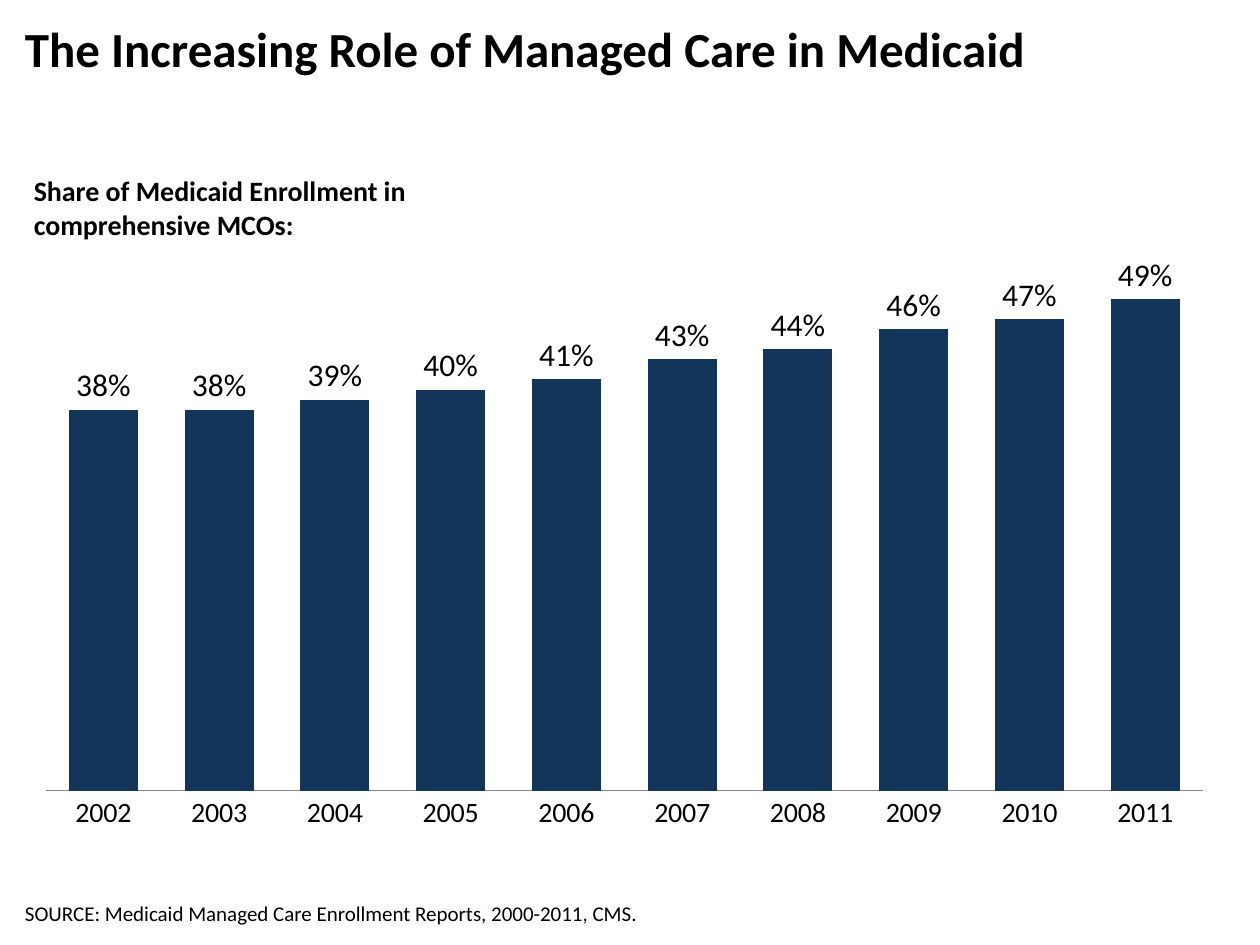
import pptx
import pptx.chart.data
import pptx.dml.color
import pptx.enum.chart
import pptx.enum.text
import pptx.oxml
import pptx.oxml.ns
import pptx.util
from pptx.util import Inches, Pt

BLACK = pptx.dml.color.RGBColor(0x00, 0x00, 0x00)
NAVY = pptx.dml.color.RGBColor(0x13, 0x35, 0x59)
GRAY = pptx.dml.color.RGBColor(0x86, 0x86, 0x86)
FONT = "Calibri"

SHARES = {
    "2002": 0.38, "2003": 0.38, "2004": 0.39, "2005": 0.40, "2006": 0.41,
    "2007": 0.43, "2008": 0.44, "2009": 0.46, "2010": 0.47, "2011": 0.49,
}


def style_font(font, size, bold=False):
    font.name = FONT
    font.size = Pt(size)
    font.bold = bold
    font.color.rgb = BLACK


def add_text(slide, box, text, size, bold=False,
             anchor=pptx.enum.text.MSO_ANCHOR.TOP):
    text_frame = slide.shapes.add_textbox(*box).text_frame
    text_frame.word_wrap = True
    text_frame.vertical_anchor = anchor
    text_frame.text = text
    style_font(text_frame.paragraphs[0].runs[0].font, size, bold)


def set_plot_layout(chart, left, top, width, height):
    """Fix the inner plot area, in fractions of the chart."""
    plot_area = chart._chartSpace.chart.plotArea
    for layout in plot_area.findall(pptx.oxml.ns.qn("c:layout")):
        plot_area.remove(layout)
    values = {"x": left, "y": top, "w": width, "h": height}
    parts = "".join(f'<c:{name} val="{value}"/>' for name, value in values.items())
    plot_area.insert(0, pptx.oxml.parse_xml(
        f'<c:layout {pptx.oxml.ns.nsdecls("c")}><c:manualLayout>'
        '<c:layoutTarget val="inner"/><c:xMode val="edge"/><c:yMode val="edge"/>'
        f'{parts}</c:manualLayout></c:layout>'))


def add_enrollment_chart(slide, box):
    chart_data = pptx.chart.data.CategoryChartData(number_format="0%")
    chart_data.categories = list(SHARES)
    chart_data.add_series("Series 1", list(SHARES.values()))
    chart = slide.shapes.add_chart(
        pptx.enum.chart.XL_CHART_TYPE.COLUMN_CLUSTERED, *box, chart_data).chart
    chart.has_legend = False
    chart.has_title = False
    style_font(chart.font, 18)
    set_plot_layout(chart, 0.02, 0.015, 0.96, 0.905)

    value_axis = chart.value_axis
    value_axis.minimum_scale = 0
    value_axis.maximum_scale = 0.6
    value_axis.has_major_gridlines = False
    value_axis.visible = False

    category_axis = chart.category_axis
    category_axis.major_tick_mark = pptx.enum.chart.XL_TICK_MARK.NONE
    category_axis.format.line.color.rgb = GRAY
    category_axis.format.line.width = Pt(0.75)
    style_font(category_axis.tick_labels.font, 16)

    plot = chart.plots[0]
    plot.gap_width = 68
    plot.vary_by_categories = False
    series = plot.series[0]
    series.format.fill.solid()
    series.format.fill.fore_color.rgb = NAVY
    labels = series.data_labels
    labels.show_value = True
    labels.number_format = "0%"
    labels.number_format_is_linked = False
    labels.position = pptx.enum.chart.XL_LABEL_POSITION.OUTSIDE_END
    style_font(labels.font, 18)


def main():
    presentation = pptx.Presentation()
    presentation.slide_width = Inches(10)
    presentation.slide_height = Inches(7.5)
    slide = presentation.slides.add_slide(presentation.slide_layouts[6])

    add_text(slide, (Inches(0.1), Inches(6.8), Inches(9.1), Inches(0.6)),
             "SOURCE: Medicaid Managed Care Enrollment Reports, 2000-2011, CMS.",
             12, anchor=pptx.enum.text.MSO_ANCHOR.BOTTOM)
    add_text(slide, (Inches(0.1), Inches(0.1), Inches(9.8), Inches(1)),
             "The Increasing Role of Managed Care in Medicaid", 28, bold=True)
    add_enrollment_chart(
        slide, (Inches(0.17), Inches(1.42), Inches(9.57), Inches(5.28)))
    add_text(slide, (Inches(0.17), Inches(1.33), Inches(4.23), Inches(0.64)),
             "Share of Medicaid Enrollment in comprehensive MCOs:", 16, bold=True)

    presentation.save("out.pptx")


if __name__ == "__main__":
    main()
